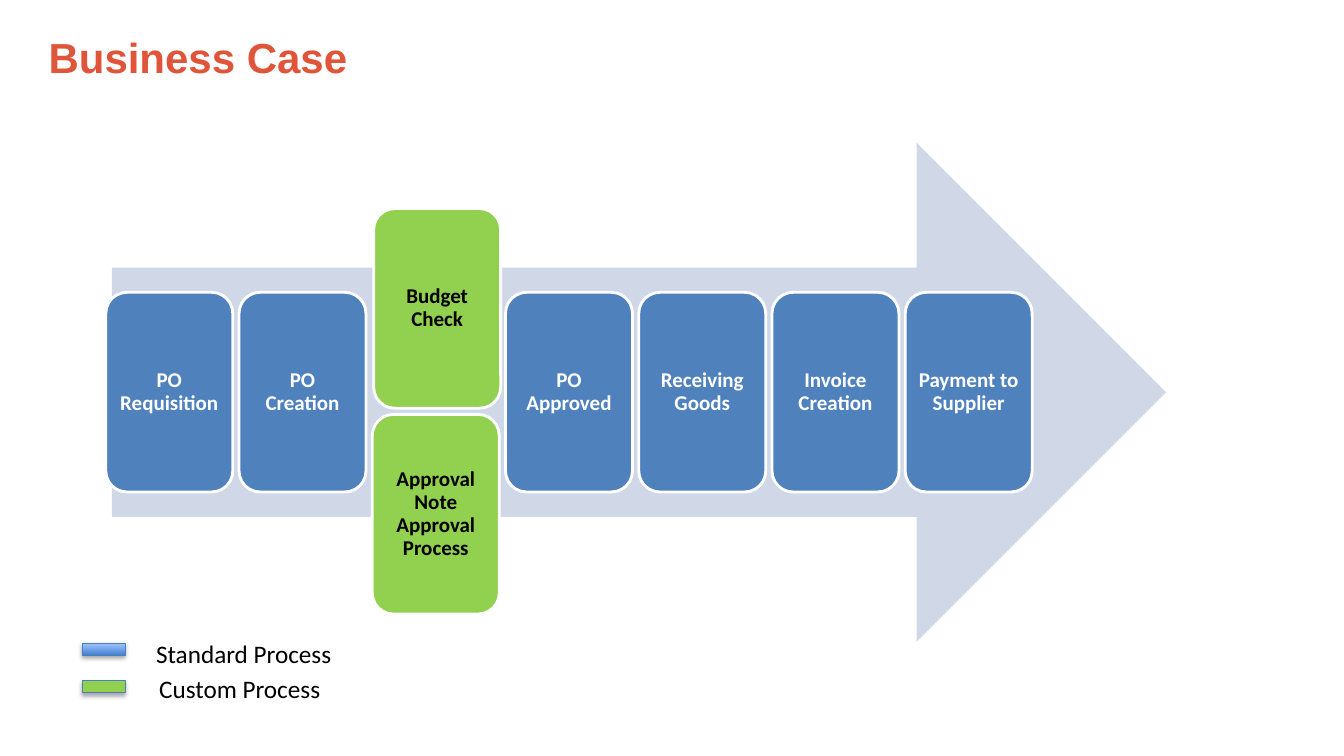
"""Build the Business Case slide: a purchase process on an arrow, with a legend."""
from dataclasses import dataclass

from lxml.etree import SubElement
from pptx import Presentation
from pptx.dml.color import RGBColor
from pptx.enum.shapes import MSO_SHAPE as Preset
from pptx.enum.text import MSO_ANCHOR as Anchor, PP_ALIGN as Align
from pptx.oxml.ns import qn
from pptx.shapes.autoshape import Shape
from pptx.slide import Slide
from pptx.util import Pt

BLUE, GREEN = "4F81BD", "92D050"
WHITE, BLACK = "FFFFFF", "000000"
STEP_LEFT, STEP_PITCH = 75.6, 95.17
STEP_WIDTH, STEP_HEIGHT = 90.7, 142.6
ROW_TOP = 208.8


@dataclass(frozen=True)
class Step:
    text: str
    column: int
    top: float = ROW_TOP
    shift: float = 0
    fill: str = BLUE
    ink: str = WHITE


@dataclass(frozen=True)
class LegendEntry:
    text: str
    swatch_top: float
    text_left: float
    text_top: float
    gradient: tuple[str, ...] = ()


STEPS = [
    Step("PO Requisition", 0),
    Step("PO Creation", 1),
    Step("Approval Note Approval Process", 2, 296, 0, GREEN, BLACK),
    Step("PO Approved", 3),
    Step("Receiving Goods", 4),
    Step("Invoice Creation", 5),
    Step("Payment to Supplier", 6),
    Step("Budget Check", 2, 149, 1, GREEN, BLACK),
]
LEGEND = [
    LegendEntry("Standard Process", 459.4, 104.4, 452.2, ("3F80CE", "A4C4FF")),
    LegendEntry("Custom Process", 486, 106.6, 477.6),
]


def color(code: str) -> RGBColor:
    return RGBColor.from_string(code)


def add_block(page: Slide, preset: Preset, left: float, top: float,
              width: float, height: float, fill: str) -> Shape:
    block = page.shapes.add_shape(preset, Pt(left), Pt(top), Pt(width), Pt(height))
    block.shadow.inherit = False
    block.fill.solid()
    block.fill.fore_color.rgb = color(fill)
    block.line.fill.background()
    return block


def set_outline(block: Shape, code: str, width: float) -> None:
    block.line.color.rgb = color(code)
    block.line.width = Pt(width)


def write(box: Shape, text: str, name: str, size: float, ink: str,
          bold: bool = False, anchor: Anchor = Anchor.TOP) -> None:
    frame = box.text_frame
    frame.word_wrap = True
    frame.vertical_anchor = anchor
    para = frame.paragraphs[0]
    para.text = text
    font = para.font
    font.name, font.size, font.bold = name, Pt(size), bold
    font.color.rgb = color(ink)


def add_label(page: Slide, left: float, top: float, width: float, height: float) -> Shape:
    return page.shapes.add_textbox(Pt(left), Pt(top), Pt(width), Pt(height))


def add_step(page: Slide, step: Step) -> None:
    left = STEP_LEFT + step.column * STEP_PITCH + step.shift
    block = add_block(page, Preset.ROUNDED_RECTANGLE, left, step.top,
                      STEP_WIDTH, STEP_HEIGHT, step.fill)
    set_outline(block, WHITE, 2)
    write(block, step.text, "Calibri", 15, step.ink, True, Anchor.MIDDLE)
    frame = block.text_frame
    frame.margin_left = frame.margin_right = Pt(4.4)
    frame.margin_top = frame.margin_bottom = Pt(4.4)
    para = frame.paragraphs[0]
    para.alignment = Align.CENTER
    para.line_spacing = 0.9


def add_drop_shadow(block: Shape) -> None:
    effects = block.element.spPr.find(qn("a:effectLst"))
    shadow = SubElement(effects, qn("a:outerShdw"), blurRad=str(Pt(3.1)),
                        dist=str(Pt(1.8)), dir="5400000", rotWithShape="0")
    tint = SubElement(shadow, qn("a:srgbClr"), val=BLACK)
    SubElement(tint, qn("a:alpha"), val="35000")


def add_legend_entry(page: Slide, entry: LegendEntry) -> None:
    swatch = add_block(page, Preset.RECTANGLE, 59, entry.swatch_top, 30.4, 8.9, GREEN)
    if entry.gradient:
        swatch.fill.gradient()
        swatch.fill.gradient_angle = 90
        for stop, code in zip(swatch.fill.gradient_stops, entry.gradient):
            stop.color.rgb = color(code)
    set_outline(swatch, "4B7EBC", 0.75)
    add_drop_shadow(swatch)
    label = add_label(page, entry.text_left, entry.text_top, 191.5, 29)
    write(label, entry.text, "Calibri", 18, BLACK)


def main() -> None:
    deck = Presentation()
    deck.slide_width, deck.slide_height = Pt(960), Pt(540)
    page = deck.slides.add_slide(deck.slide_layouts[6])
    title = add_label(page, 27.6, 0, 699, 81.4)
    write(title, "Business Case", "Arial", 30, "E05439", True, Anchor.MIDDLE)
    add_block(page, Preset.RIGHT_ARROW, 80, 102, 753, 356.4, "D0D8E8")
    for step in STEPS:
        add_step(page, step)
    for entry in LEGEND:
        add_legend_entry(page, entry)
    deck.save("out.pptx")


if __name__ == "__main__":
    main()
